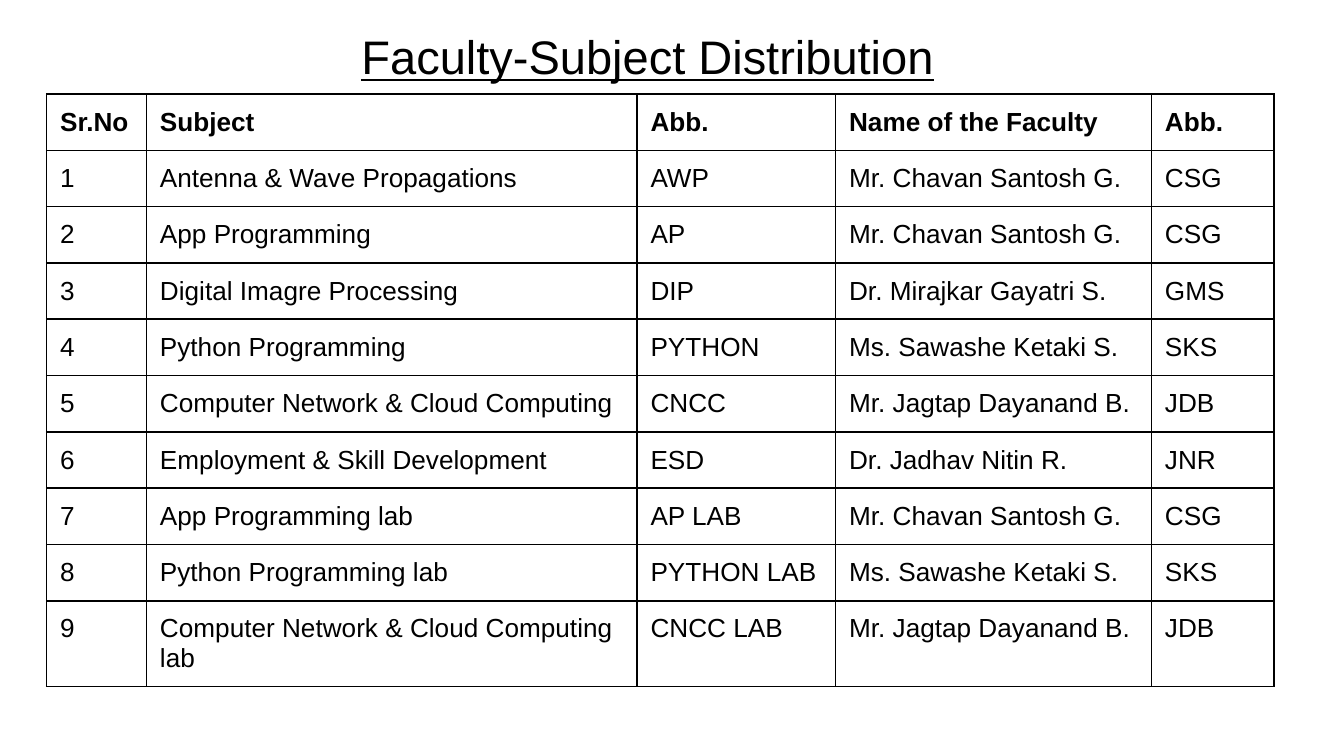
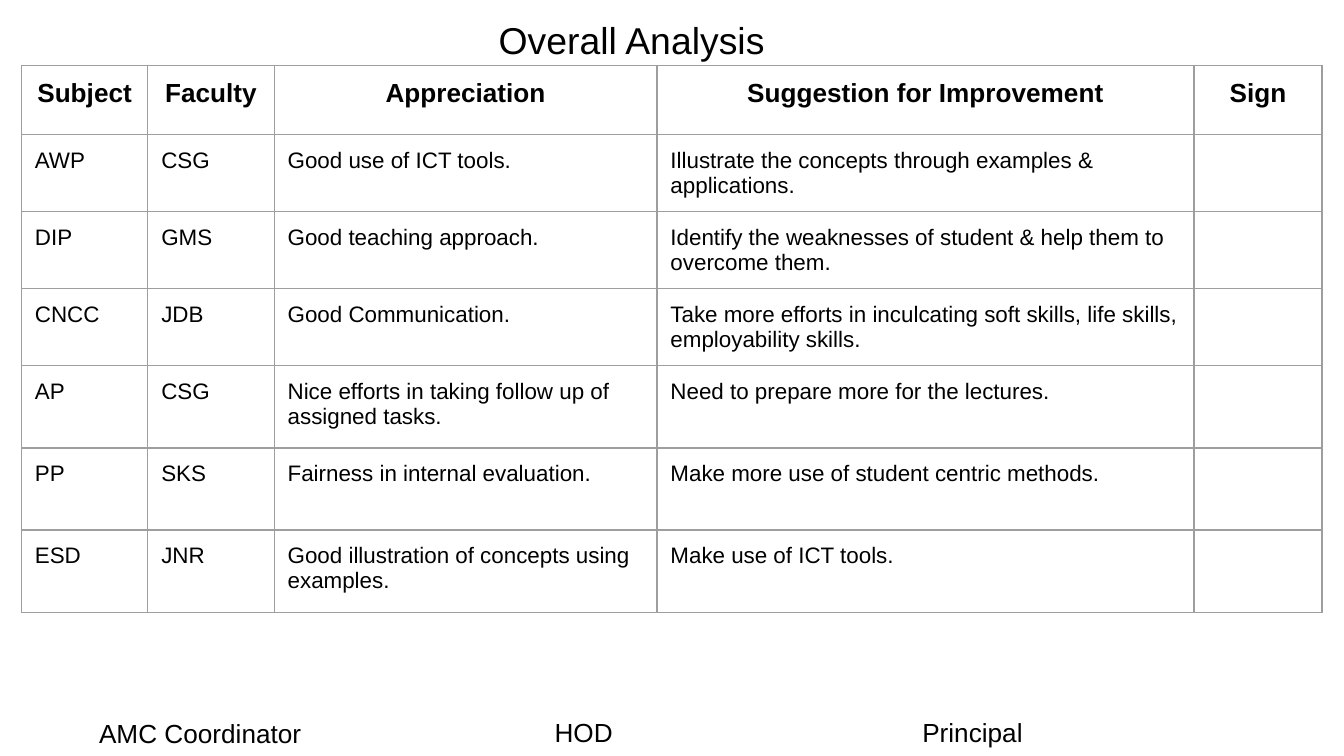
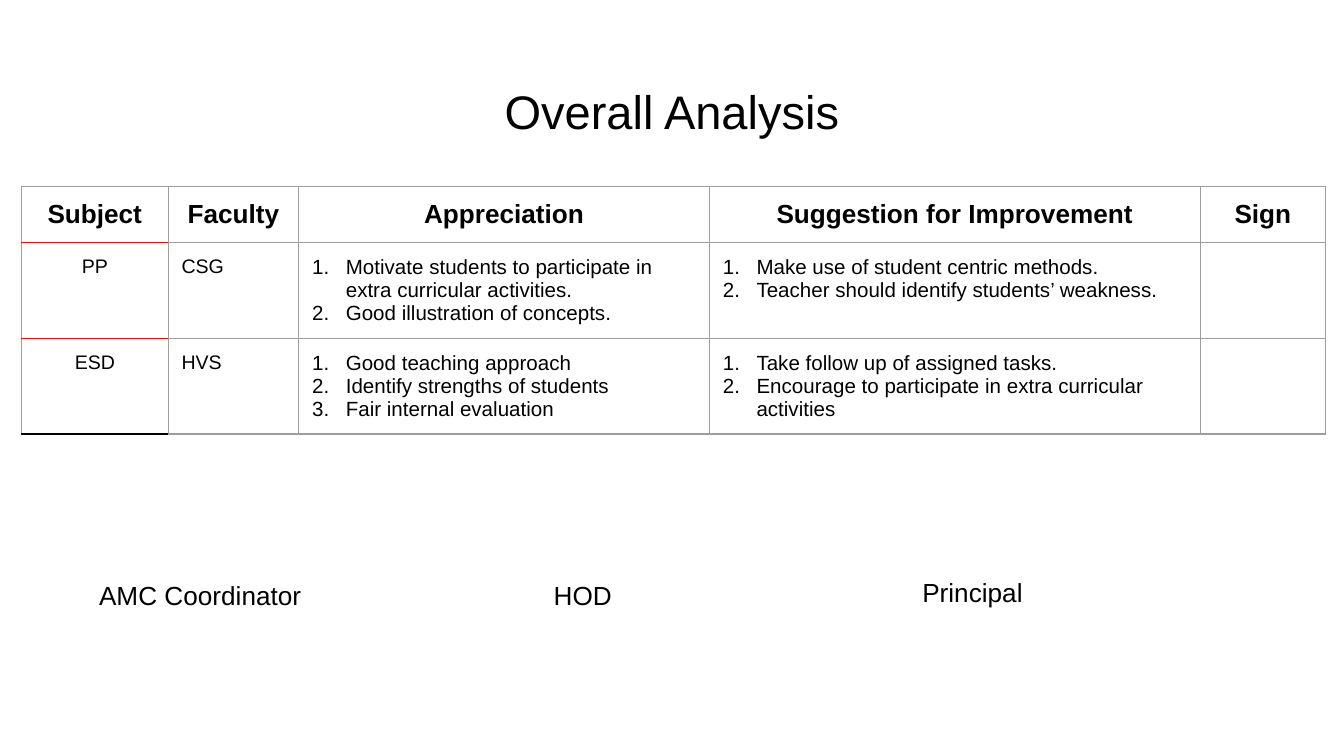
"""Build three slides on faculty subjects and the overall teaching analysis."""
from lxml import etree
from pptx import Presentation
from pptx.dml.color import RGBColor
from pptx.enum.text import MSO_ANCHOR, MSO_AUTO_SIZE, PP_ALIGN
from pptx.oxml.ns import qn
from pptx.util import Pt

TOP = MSO_ANCHOR.TOP
NO_AUTOFIT = MSO_AUTO_SIZE.NONE
FIT_SHAPE = MSO_AUTO_SIZE.SHAPE_TO_FIT_TEXT
LEFT, CENTER = PP_ALIGN.LEFT, PP_ALIGN.CENTER

BLACK = RGBColor(0x00, 0x00, 0x00)
GRAY = RGBColor(0x9E, 0x9E, 0x9E)
RED = RGBColor(0xFF, 0x00, 0x00)
FONT = "Arial"
INSET = Pt(7.2)
LABEL_SIZE = 14
EDGES = ("lnL", "lnR", "lnT", "lnB")

ANALYSIS_HEADINGS = ["Subject", "Faculty", "Appreciation", "Suggestion for Improvement", "Sign"]
SIGNATORIES = [("AMC Coordinator", 221), ("HOD", 114.5), ("Principal", 187)]

distribution = [
    ["Sr.No", "Subject", "Abb.", "Name of the Faculty", "Abb."],
    ["1", "Antenna & Wave Propagations", "AWP", "Mr. Chavan Santosh G.", "CSG"],
    ["2", "App Programming", "AP", "Mr. Chavan Santosh G.", "CSG"],
    ["3", "Digital Imagre Processing", "DIP", "Dr. Mirajkar Gayatri S.", "GMS"],
    ["4", "Python Programming", "PYTHON", "Ms. Sawashe Ketaki S.", "SKS"],
    ["5", "Computer Network & Cloud Computing", "CNCC", "Mr. Jagtap Dayanand B.", "JDB"],
    ["6", "Employment & Skill Development", "ESD", "Dr. Jadhav Nitin R.", "JNR"],
    ["7", "App Programming lab", "AP LAB", "Mr. Chavan Santosh G.", "CSG"],
    ["8", "Python Programming lab", "PYTHON LAB", "Ms. Sawashe Ketaki S.", "SKS"],
    ["9", "Computer Network & Cloud Computing lab", "CNCC LAB", "Mr. Jagtap Dayanand B.", "JDB"],
]
theory_analysis = [
    ANALYSIS_HEADINGS,
    ["AWP", "CSG", "Good use of ICT tools.",
     "Illustrate the concepts through examples & applications.", ""],
    ["DIP", "GMS", "Good teaching approach.",
     "Identify the weaknesses of student & help them to overcome them.", ""],
    ["CNCC", "JDB", "Good Communication.",
     "Take more efforts in inculcating soft skills, life skills, employability skills.", ""],
    ["AP", "CSG", "Nice efforts in taking follow up of assigned tasks.",
     "Need to prepare more for the lectures.", ""],
    ["PP", "SKS", "Fairness in internal evaluation.",
     "Make more use of student centric methods.", ""],
    ["ESD", "JNR", "Good illustration of concepts using examples.",
     "Make use of ICT tools.", ""],
]
further_analysis = [
    ANALYSIS_HEADINGS,
    ["PP", "CSG",
     ["Motivate students to participate in extra curricular activities.",
      "Good illustration of concepts."],
     ["Make use of student centric methods.",
      "Teacher should identify students’ weakness."], ""],
    ["ESD", "HVS",
     ["Good teaching approach", "Identify strengths of students", "Fair internal evaluation"],
     ["Take follow up of assigned tasks.",
      "Encourage to participate in extra curricular activities"], ""],
]


def set_edge(cell, edge, color, width):
    """Draw one border of a cell, replacing any earlier one."""
    properties = cell._tc.get_or_add_tcPr()
    for old in properties.findall(qn(f"a:{edge}")):
        properties.remove(old)
    line = etree.Element(qn(f"a:{edge}"), w=str(Pt(width)))
    fill = etree.SubElement(line, qn("a:solidFill"))
    etree.SubElement(fill, qn("a:srgbClr"), val=str(color))
    properties.insert(EDGES.index(edge), line)


def add_grid(slide, left, top, widths, heights, rows, line, body_sizes, heading_align):
    """Add a bordered table; a list in a cell becomes numbered points."""
    grid = slide.shapes.add_table(len(rows), len(widths), Pt(left), Pt(top),
                                  Pt(sum(widths)), Pt(sum(heights))).table
    grid.first_row = grid.horz_banding = False
    for column, width in zip(grid.columns, widths):
        column.width = Pt(width)
    for row, height in zip(grid.rows, heights):
        row.height = Pt(height)
    for r, entries in enumerate(rows):
        for c, entry in enumerate(entries):
            cell = grid.cell(r, c)
            cell.margin_left = cell.margin_right = INSET
            cell.margin_top = cell.margin_bottom = INSET
            cell.fill.background()
            for edge in EDGES:
                set_edge(cell, edge, *line)
            numbered = isinstance(entry, list)
            cell.text = "\n".join(entry) if numbered else entry
            for paragraph in cell.text_frame.paragraphs:
                paragraph.alignment = heading_align if r == 0 else LEFT
                paragraph.font.name = FONT
                paragraph.font.size = Pt(LABEL_SIZE if r == 0 else body_sizes[c])
                paragraph.font.bold = r == 0
                paragraph.font.color.rgb = BLACK
                if numbered:
                    settings = paragraph._p.get_or_add_pPr()
                    settings.set("marL", str(Pt(18)))
                    settings.set("indent", str(Pt(-18)))
                    numbering = etree.Element(qn("a:buAutoNum"), type="arabicPeriod")
                    settings.insert(0, numbering)
    return grid


prs = Presentation()
prs.slide_width, prs.slide_height = Pt(720), Pt(405)
title_only = prs.slide_layouts[5]

slides = []
for heading, left, top, size, underlined in [
    ("Faculty-Subject Distribution", 11.5, 5.8, 25.2, True),
    ("Overall Analysis", 2.9, 0, 20, False),
    ("Overall Analysis", 24.5, 35.3, 25.2, False),
]:
    slide = prs.slides.add_slide(title_only)
    title = slide.shapes.title
    title.left, title.top, title.width, title.height = Pt(left), Pt(top), Pt(671), Pt(45.4)
    frame = title.text_frame
    frame.text = heading
    frame.auto_size = NO_AUTOFIT
    frame.vertical_anchor = TOP
    frame.margin_left = frame.margin_right = frame.margin_bottom = INSET
    frame.margin_top = Pt(9)
    paragraph = frame.paragraphs[0]
    paragraph.alignment = CENTER
    paragraph.font.name = FONT
    paragraph.font.size = Pt(size)
    paragraph.font.color.rgb = BLACK
    if underlined:
        paragraph.font.underline = True
    slides.append(slide)
distribution_slide, theory_slide, further_slide = slides

add_grid(distribution_slide, 25, 50.4, [53.5, 262.8, 106.4, 169.2, 65.6], [30] * 9 + [46],
         distribution, (BLACK, 1), [14] * 5, LEFT)
add_grid(theory_slide, 11.5, 35.1, [67.7, 67.7, 205.1, 287.7, 68.6], [37] + [41.2] * 3 + [44] * 3,
         theory_analysis, (GRAY, 0.75), [12] * 5, CENTER)
further_grid = add_grid(further_slide, 11.5, 99.8, [78.6, 70, 220, 263, 67], [30, 51.3, 51.3],
                        further_analysis, (GRAY, 0.75), [10.5, 10.5, 11, 11, 11], CENTER)

set_edge(further_grid.cell(0, 0), "lnB", RED, 0.75)
for r in (1, 2):
    subject = further_grid.cell(r, 0)
    subject.text_frame.paragraphs[0].alignment = CENTER
    set_edge(subject, "lnT", RED, 0.75)
    set_edge(subject, "lnB", RED if r == 1 else BLACK, 0.75)

for slide, places in [
    (theory_slide, [(46, 381), (290, 380), (487, 380)]),
    (further_slide, [(46, 307), (289.5, 307), (487, 305.3)]),
]:
    for (signatory, width), (left, top) in zip(SIGNATORIES, places):
        label = slide.shapes.add_textbox(Pt(left), Pt(top), Pt(width), Pt(24.2)).text_frame
        label.word_wrap = True
        label.auto_size = FIT_SHAPE
        label.text = signatory
        paragraph = label.paragraphs[0]
        paragraph.font.name = FONT
        paragraph.font.size = Pt(LABEL_SIZE)
        paragraph.font.color.rgb = BLACK

prs.save("out.pptx")
